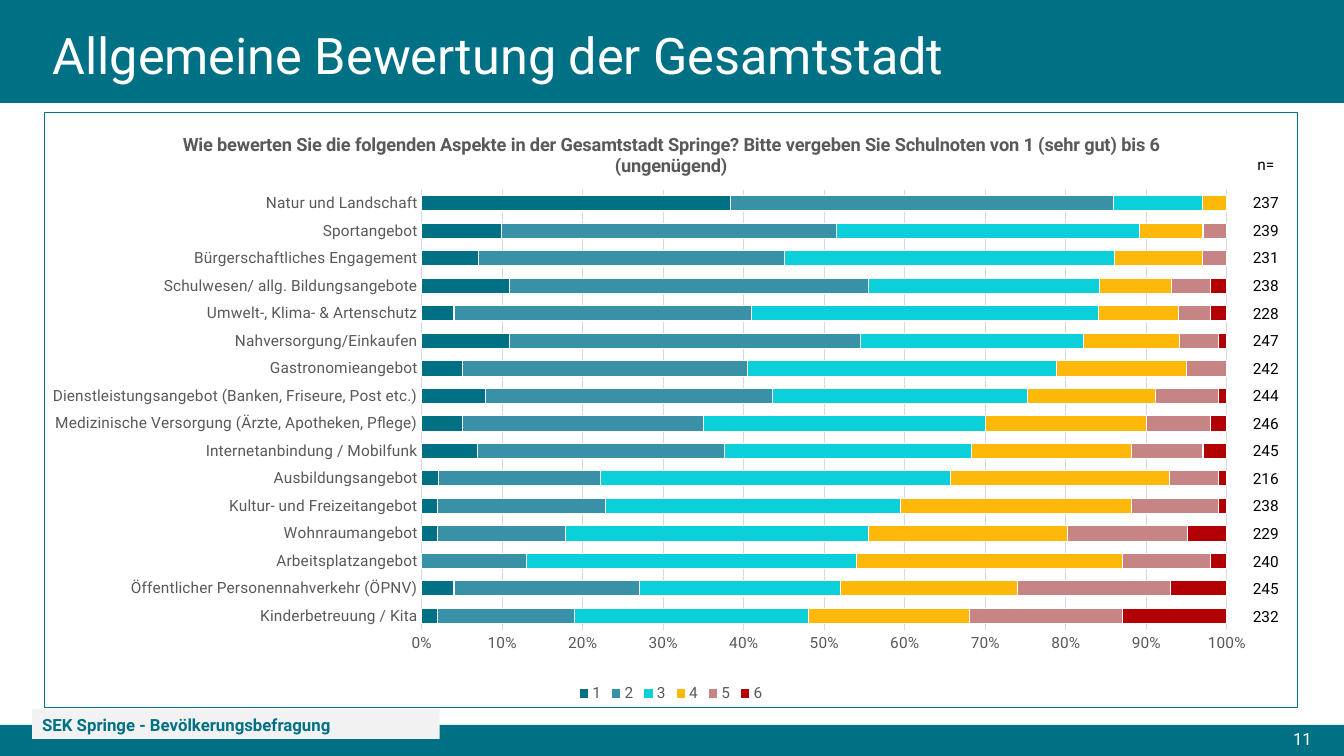
import dataclasses

import lxml.etree
import pptx
import pptx.chart.data
import pptx.dml.color
import pptx.enum.chart
import pptx.enum.shapes
import pptx.enum.text
import pptx.oxml
import pptx.oxml.ns
import pptx.util
from pptx.util import Inches


@dataclasses.dataclass(frozen=True)
class Theme:
    """Hold the colours, font and type sizes of the slide."""
    font: str = "Roboto"
    petrol: str = "007085"
    white: str = "FFFFFF"
    black: str = "000000"
    label_grey: str = "F2F2F2"
    chart_text: str = "595959"
    grid: str = "D9D9D9"
    grades: tuple = ("007085", "3891A7", "0BD0D9", "FEB80A", "C78484", "B20005")
    title_size: int = 36
    question_size: int = 13
    footer_size: int = 12
    chart_size: int = 11


THEME = Theme()

QUESTION = ("Wie bewerten Sie die folgenden Aspekte in der Gesamtstadt Springe? "
            "Bitte vergeben Sie Schulnoten von 1 (sehr gut) bis 6 (ungenügend)")

RATINGS = [
    ("Natur und Landschaft", 237, (38, 47, 11, 3, 0, 0)),
    ("Sportangebot", 239, (10, 42, 38, 8, 3, 0)),
    ("Bürgerschaftliches Engagement", 231, (7, 38, 41, 11, 3, 0)),
    ("Schulwesen/ allg. Bildungsangebote", 238, (11, 45, 29, 9, 5, 2)),
    ("Umwelt-, Klima- & Artenschutz", 228, (4, 37, 43, 10, 4, 2)),
    ("Nahversorgung/Einkaufen", 247, (11, 44, 28, 12, 5, 1)),
    ("Gastronomieangebot", 242, (5, 35, 38, 16, 5, 0)),
    ("Dienstleistungsangebot (Banken, Friseure, Post etc.)", 244, (8, 36, 32, 16, 8, 1)),
    ("Medizinische Versorgung (Ärzte, Apotheken, Pflege)", 246, (5, 30, 35, 20, 8, 2)),
    ("Internetanbindung / Mobilfunk", 245, (7, 31, 31, 20, 9, 3)),
    ("Ausbildungsangebot", 216, (2, 20, 43, 27, 6, 1)),
    ("Kultur- und Freizeitangebot", 238, (2, 21, 37, 29, 11, 1)),
    ("Wohnraumangebot", 229, (2, 16, 38, 25, 15, 5)),
    ("Arbeitsplatzangebot", 240, (0, 13, 41, 33, 11, 2)),
    ("Öffentlicher Personennahverkehr (ÖPNV)", 245, (4, 23, 25, 22, 19, 7)),
    ("Kinderbetreuung / Kita", 232, (2, 17, 29, 20, 19, 13)),
]


def rgb(colour):
    """Turn a hex string into a colour."""
    return pptx.dml.color.RGBColor.from_string(colour)


def style_font(font, size, colour, bold=False):
    """Set typeface, size, colour and weight."""
    font.name = THEME.font
    font.size = pptx.util.Pt(size)
    font.color.rgb = rgb(colour)
    font.bold = bold


def style_line(line, colour):
    """Draw a thin line in one colour."""
    line.color.rgb = rgb(colour)
    line.width = pptx.util.Pt(0.75)


def write(frame, text, size, colour, align="LEFT", bold=False, spacing=None, anchor="MIDDLE"):
    """Write one styled run into a text frame."""
    frame.word_wrap = True
    frame.vertical_anchor = getattr(pptx.enum.text.MSO_ANCHOR, anchor)
    paragraph = frame.paragraphs[0]
    paragraph.alignment = getattr(pptx.enum.text.PP_ALIGN, align)
    if spacing:
        paragraph.line_spacing = spacing
    run = paragraph.add_run()
    run.text = text
    style_font(run.font, size, colour, bold)


def add_band(slide, left, top, width, height, colour):
    """Add a plain filled rectangle."""
    band = slide.shapes.add_shape(pptx.enum.shapes.MSO_SHAPE.RECTANGLE,
                                  Inches(left), Inches(top), Inches(width), Inches(height))
    band.shadow.inherit = False
    band.fill.solid()
    band.fill.fore_color.rgb = rgb(colour)
    band.line.fill.background()
    return band


def add_label(slide, left, top, width, height, text, size, colour, **style):
    """Add a text box with one run."""
    box = slide.shapes.add_textbox(Inches(left), Inches(top), Inches(width), Inches(height))
    write(box.text_frame, text, size, colour, **style)


def place_title(slide, text):
    """Set the title over the top band."""
    title = slide.shapes.title
    title.left, title.top = Inches(0.42), Inches(0.21)
    title.width, title.height = Inches(11.5), Inches(0.73)
    write(title.text_frame, text, THEME.title_size, THEME.white, spacing=0.9)
    title.element.getparent().append(title.element)


def frame_chart(chart):
    """Fix the plot area and give the chart a white ground and border."""
    plot_area = chart.element.find(".//" + pptx.oxml.ns.qn("c:plotArea"))
    for layout in plot_area.findall(pptx.oxml.ns.qn("c:layout")):
        plot_area.remove(layout)
    places = "".join(f'<c:{key} val="{value}"/>' for key, value in (
        ("layoutTarget", "inner"), ("xMode", "edge"), ("yMode", "edge"),
        ("x", 0.301), ("y", 0.13), ("w", 0.643), ("h", 0.74)))
    plot_area.insert(0, pptx.oxml.parse_xml(
        f'<c:layout {pptx.oxml.ns.nsdecls("c")}><c:manualLayout>{places}</c:manualLayout></c:layout>'))
    chart.element.find(pptx.oxml.ns.qn("c:chart")).addnext(pptx.oxml.parse_xml(
        f'<c:spPr {pptx.oxml.ns.nsdecls("c", "a")}>'
        f'<a:solidFill><a:srgbClr val="{THEME.white}"/></a:solidFill>'
        f'<a:ln w="9525"><a:solidFill><a:srgbClr val="{THEME.petrol}"/></a:solidFill></a:ln>'
        '</c:spPr>'))


def style_axes(chart):
    """Format the aspect axis and the percentage axis."""
    aspects, shares = chart.category_axis, chart.value_axis
    for axis in (aspects, shares):
        axis.major_tick_mark = axis.minor_tick_mark = pptx.enum.chart.XL_TICK_MARK.NONE
        style_font(axis.tick_labels.font, THEME.chart_size, THEME.chart_text)
    style_line(aspects.format.line, THEME.grid)
    shares.format.line.fill.background()
    shares.has_major_gridlines = True
    style_line(shares.major_gridlines.format.line, THEME.grid)
    shares.minimum_scale, shares.maximum_scale, shares.major_unit = 0, 1, 0.1
    shares.tick_labels.number_format = "0%"
    shares.tick_labels.number_format_is_linked = False


def add_ratings_chart(slide):
    """Add the stacked bars of school grades per aspect."""
    bottom_up = RATINGS[::-1]
    data = pptx.chart.data.CategoryChartData()
    data.categories = [aspect for aspect, _, _ in bottom_up]
    for index in range(len(THEME.grades)):
        data.add_series(str(index + 1), [shares[index] for _, _, shares in bottom_up])
    chart = slide.shapes.add_chart(pptx.enum.chart.XL_CHART_TYPE.BAR_STACKED_100,
                                   Inches(0.44), Inches(1.11), Inches(12.43), Inches(5.91),
                                   data).chart
    style_font(chart.font, THEME.chart_size, THEME.black)
    bars = chart.plots[0]
    bars.gap_width, bars.overlap, bars.vary_by_categories = 80, 100, False
    for grade, colour in zip(bars.series, THEME.grades):
        grade.format.fill.solid()
        grade.format.fill.fore_color.rgb = rgb(colour)
        style_line(grade.format.line, THEME.white)
    style_axes(chart)
    chart.has_title = True
    question = chart.chart_title.text_frame.paragraphs[0].add_run()
    question.text = QUESTION
    style_font(question.font, THEME.question_size, THEME.chart_text, bold=True)
    chart.has_legend = True
    chart.legend.position = pptx.enum.chart.XL_LEGEND_POSITION.BOTTOM
    chart.legend.include_in_layout = False
    style_font(chart.legend.font, THEME.chart_size, THEME.chart_text)
    frame_chart(chart)


def add_sample_sizes(slide):
    """List the number of answers beside each bar."""
    rows = [(1.49, "n=")]
    rows += [(1.87 + index * 4.1 / 15, str(count)) for index, (_, count, _) in enumerate(RATINGS)]
    for top, text in rows:
        add_label(slide, 12.29, top, 0.53, 0.29, text, THEME.chart_size, THEME.black,
                  align="CENTER", anchor="TOP")


def main():
    """Build and save the slide."""
    deck = pptx.Presentation()
    deck.slide_width, deck.slide_height = Inches(13.33), Inches(7.5)
    slide = deck.slides.add_slide(deck.slide_layouts.get_by_name("Title Only"))
    add_band(slide, 0, 0, 13.33, 1.02, THEME.petrol)
    add_band(slide, 0, 7.19, 13.33, 0.31, THEME.petrol)
    add_label(slide, 8.72, 7.18, 4.39, 0.3, "11", THEME.footer_size, THEME.white, align="RIGHT")
    survey = add_band(slide, 0.32, 7.03, 4.04, 0.3, THEME.label_grey)
    write(survey.text_frame, "SEK Springe - Bevölkerungsbefragung", THEME.footer_size,
          THEME.petrol, bold=True, spacing=1.07)
    add_ratings_chart(slide)
    place_title(slide, "Allgemeine Bewertung der Gesamtstadt")
    add_sample_sizes(slide)
    deck.save("out.pptx")


if __name__ == "__main__":
    main()
